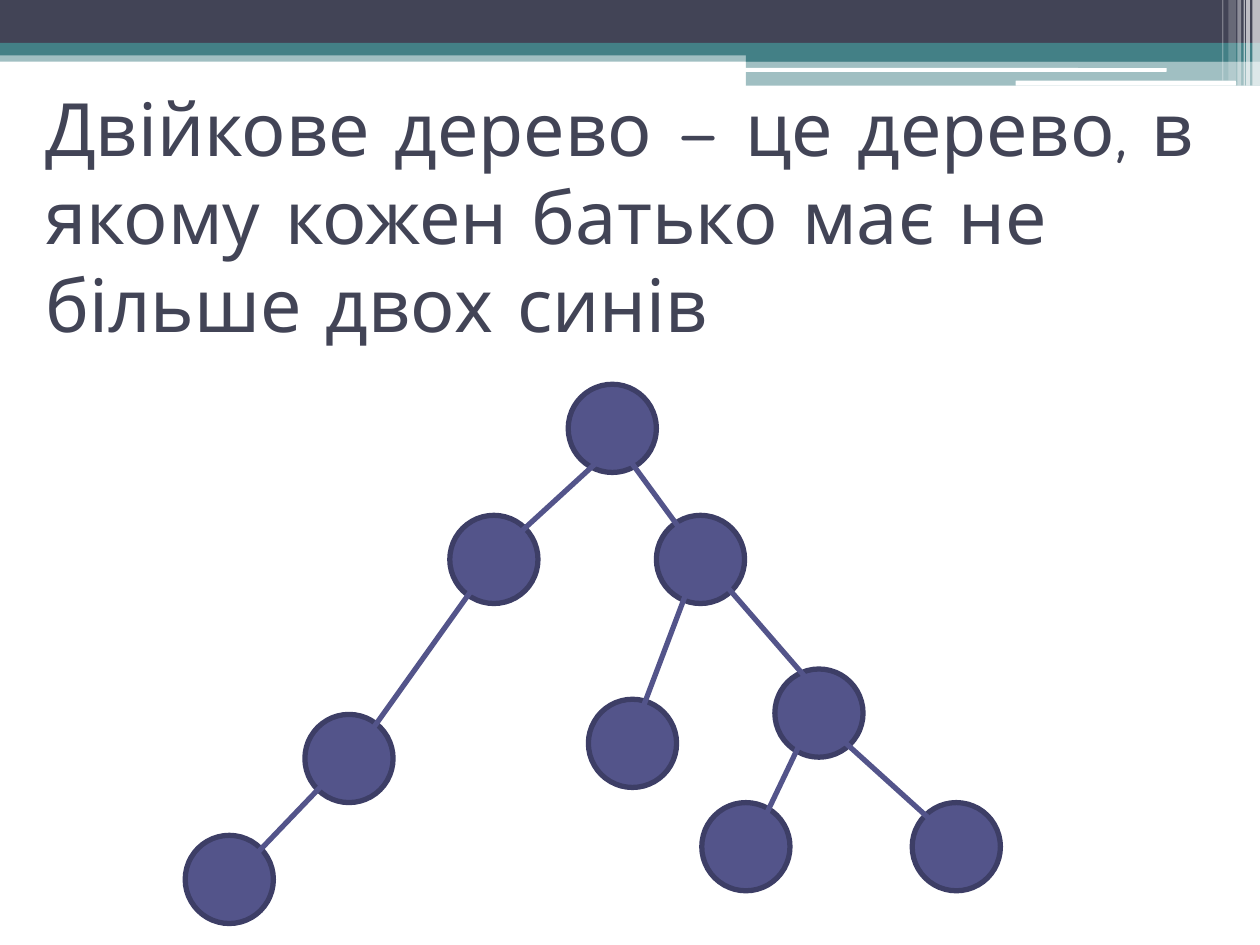
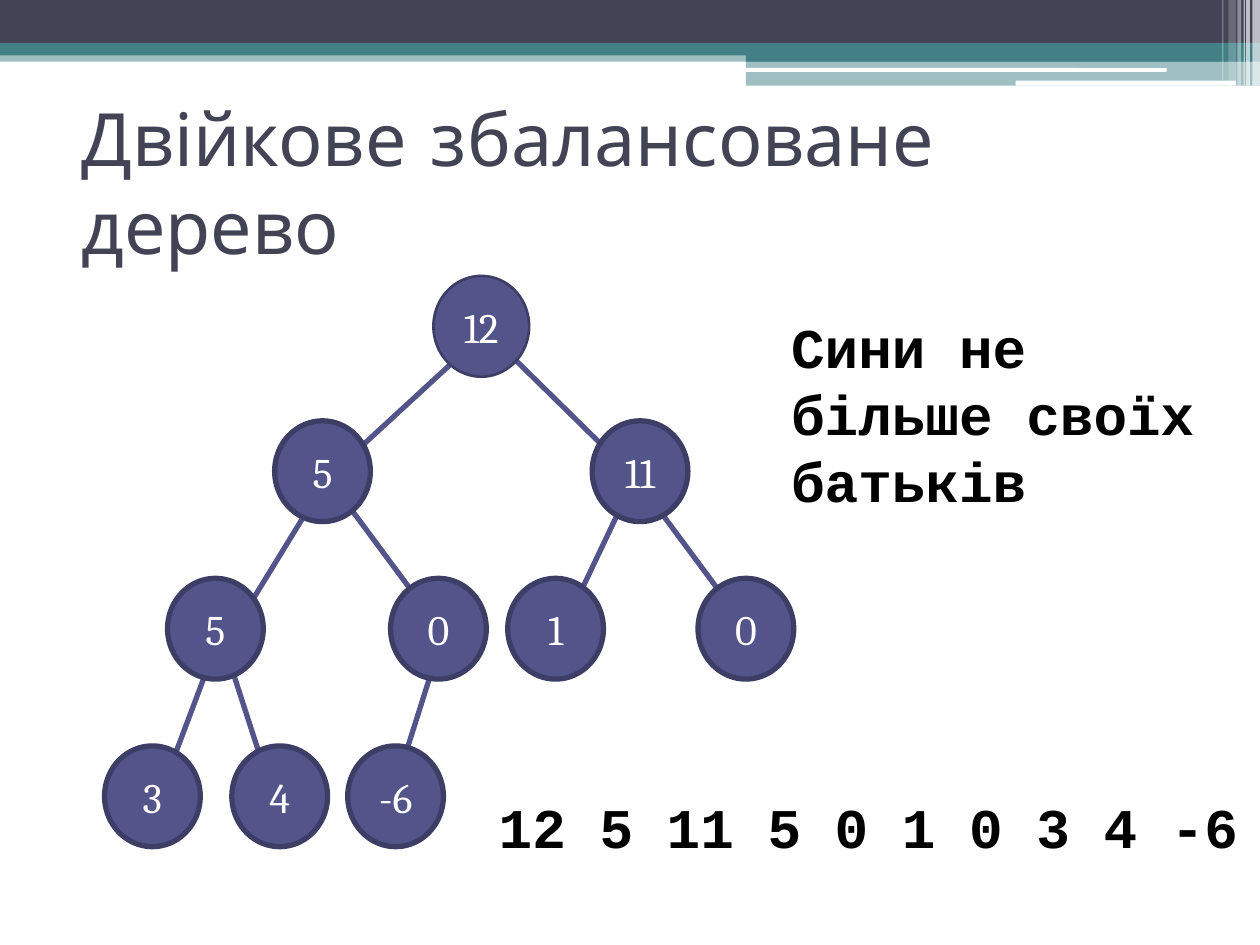
from lxml import etree
from pptx import Presentation
from pptx.dml.color import RGBColor
from pptx.enum import shapes, text
from pptx.oxml.ns import qn
from pptx.util import Inches, Pt

COLORS = {
    "ink": "424456",
    "teal": "438086",
    "node": "53548A",
    "node_edge": "3D3E66",
    "white": "FFFFFF",
    "black": "000000",
}
TITLE = {"name": "Comic Neue", "size": Pt(42), "color": "ink"}
NOTE = {"name": "Courier New", "size": Pt(32), "bold": True, "color": "black"}
KEY = {"name": "Cambria", "size": Pt(24), "color": "white"}

RECT = shapes.MSO_SHAPE.RECTANGLE
ROUNDED = shapes.MSO_SHAPE.ROUNDED_RECTANGLE

# kind, (left, top, width, height), colour, opacity in percent
HEADER_BANDS = [
    (RECT, (0, 0.4, 10, 0.09), "teal", 50),
    (RECT, (0, 0, 10, 0.34), "ink", 100),
    (RECT, (0, 0.34, 10, 0.1), "teal", 100),
    (RECT, (5.92, 0.39, 4.08, 0.1), "teal", 100),
    (RECT, (5.92, 0.48, 4.08, 0.2), "teal", 50),
    (ROUNDED, (5.91, 0.54, 3.35, 0.03), "white", 100),
    (ROUNDED, (8.06, 0.64, 1.75, 0.04), "white", 100),
]
# left, width, height, opacity in percent
HEADER_STRIPES = [
    (9.94, 0.06, 0.68, 65),
    (9.89, 0.03, 0.68, 65),
    (9.87, 0.01, 0.68, 60),
    (9.82, 0.03, 0.68, 40),
    (9.75, 0.06, 0.64, 20),
    (9.7, 0.01, 0.64, 30),
]


def rgb(color):
    return RGBColor.from_string(COLORS[color])


def add_filled(parent, kind, box, color, opacity=100):
    """Add a borderless, shadowless shape; box is in inches."""
    shape = parent.shapes.add_shape(kind, *map(Inches, box))
    shape.shadow.inherit = False
    shape.fill.solid()
    shape.fill.fore_color.rgb = rgb(color)
    shape.line.fill.background()
    if opacity < 100:
        color_element = shape.fill._xPr.find(".//" + qn("a:srgbClr"))
        etree.SubElement(color_element, qn("a:alpha"), val=str(opacity * 1000))
    return shape


def write(shape, words, font_style, **frame_style):
    frame = shape.text_frame
    for name, value in frame_style.items():
        setattr(frame, name, value)
    paragraph = frame.paragraphs[0]
    run = paragraph.add_run()
    run.text = words
    for name, value in font_style.items():
        if name == "color":
            run.font.color.rgb = rgb(value)
        else:
            setattr(run.font, name, value)
    return paragraph


def add_text(slide, box, words, font_style, anchor=text.MSO_ANCHOR.TOP):
    textbox = slide.shapes.add_textbox(*map(Inches, box))
    write(textbox, words, font_style, word_wrap=True, vertical_anchor=anchor)


def add_header(slide):
    for band in HEADER_BANDS:
        add_filled(slide, *band)
    for left, width, height, opacity in HEADER_STRIPES:
        add_filled(slide, RECT, (left, 0, width, height), "white", opacity)


def start_slide(presentation, title, title_box):
    slide = presentation.slides.add_slide(presentation.slide_layouts[6])
    add_header(slide)
    add_text(slide, title_box, title, TITLE, text.MSO_ANCHOR.MIDDLE)
    return slide


def add_node(group, box, key="", line_width=3):
    node = add_filled(group, shapes.MSO_SHAPE.OVAL, box, "node")
    node.line.color.rgb = rgb("node_edge")
    node.line.width = Pt(line_width)
    if key:
        paragraph = write(node, key, KEY, word_wrap=False,
                          vertical_anchor=text.MSO_ANCHOR.MIDDLE)
        paragraph.alignment = text.PP_ALIGN.CENTER


def add_branch(group, origin, start, end):
    left, top = origin
    branch = group.shapes.add_connector(
        shapes.MSO_CONNECTOR.STRAIGHT,
        Inches(left + start[0]), Inches(top + start[1]),
        Inches(left + end[0]), Inches(top + end[1]))
    branch.line.color.rgb = rgb("node")
    branch.line.width = Pt(3)
    etree.SubElement(branch._element.spPr, qn("a:effectLst"))


def add_plain_tree(slide, origin):
    """Tree of unlabelled nodes, with the branches over them."""
    left, top = origin
    size = 0.7
    nodes = [(2.1, 1.04), (3.04, 0), (3.2, 2.5), (0.95, 2.62), (4.68, 2.26),
             (3.74, 1.04), (5.77, 3.32), (4.1, 3.32), (0, 3.58)]
    root, left_son, right_son, grandson = (
        (3.43, 0.47), (2.49, 1.33), (4.06, 1.33), (4.99, 2.62))
    branches = [
        (root, right_son), (root, left_son),
        (right_son, (5.23, 2.68)), ((4.1, 1.33), (3.51, 2.89)),
        (left_son, (1.32, 2.97)),
        (grandson, (6.24, 3.75)), (grandson, (4.45, 3.75)),
        ((1.29, 2.97), (0.37, 3.93)),
    ]
    group = slide.shapes.add_group_shape()
    for x, y in nodes:
        add_node(group, (left + x, top + y, size, size))
    for start, end in branches:
        add_branch(group, origin, start, end)


def add_keyed_tree(slide, origin):
    """Tree of numbered nodes in levels, with the branches under them."""
    left, top = origin
    level_tops = [0, 1.15, 2.4, 3.73]
    joint_tops = [0.44, 1.6, 2.84, 4.17]
    levels = [
        [(2.61, "12")],
        [(1.35, "5"), (3.87, "11")],
        [(0.5, "5"), (2.27, "0"), (3.2, "1"), (4.71, "0")],
        [(0, "3"), (1.01, "4"), (1.93, "-6")],
    ]
    # per level: x of the father's joint and of the son's joint
    branch_levels = [
        [(3.03, 4.21), (3.03, 1.77)],
        [(1.77, 1.01), (1.77, 2.69), (4.21, 3.62), (4.21, 5.13)],
        [(0.92, 0.42), (0.92, 1.35), (2.69, 2.27)],
    ]
    group = slide.shapes.add_group_shape()
    for branches, father_y, son_y in zip(branch_levels, joint_tops, joint_tops[1:]):
        for father_x, son_x in branches:
            add_branch(group, origin, (father_x, father_y), (son_x, son_y))
    for depth, (nodes, y) in enumerate(zip(levels, level_tops)):
        for x, key in nodes:
            add_node(group, (left + x, top + y, 0.76, 0.8), key,
                     line_width=3 if depth else 1.5)


def build_definition_slide(presentation):
    slide = start_slide(
        presentation,
        "Двійкове дерево – це дерево, в якому кожен батько має не більше двох синів",
        (0.26, 0.69, 9.49, 2.03))
    add_plain_tree(slide, (1.47, 3.05))


def build_balanced_slide(presentation):
    slide = start_slide(presentation, "Двійкове збалансоване дерево",
                        (0.55, 0.7, 9.06, 1.48))
    add_keyed_tree(slide, (0.83, 2.19))
    add_text(slide, (3.86, 6.24, 6.14, 0.64), "12 5 11 5 0 1 0 3 4 -6", NOTE)
    add_text(slide, (6.18, 2.43, 3.68, 1.72), "Сини не більше своїх батьків", NOTE)


def main():
    presentation = Presentation()
    presentation.slide_width = Inches(10)
    presentation.slide_height = Inches(7.5)
    build_definition_slide(presentation)
    build_balanced_slide(presentation)
    presentation.save("out.pptx")


if __name__ == "__main__":
    main()
